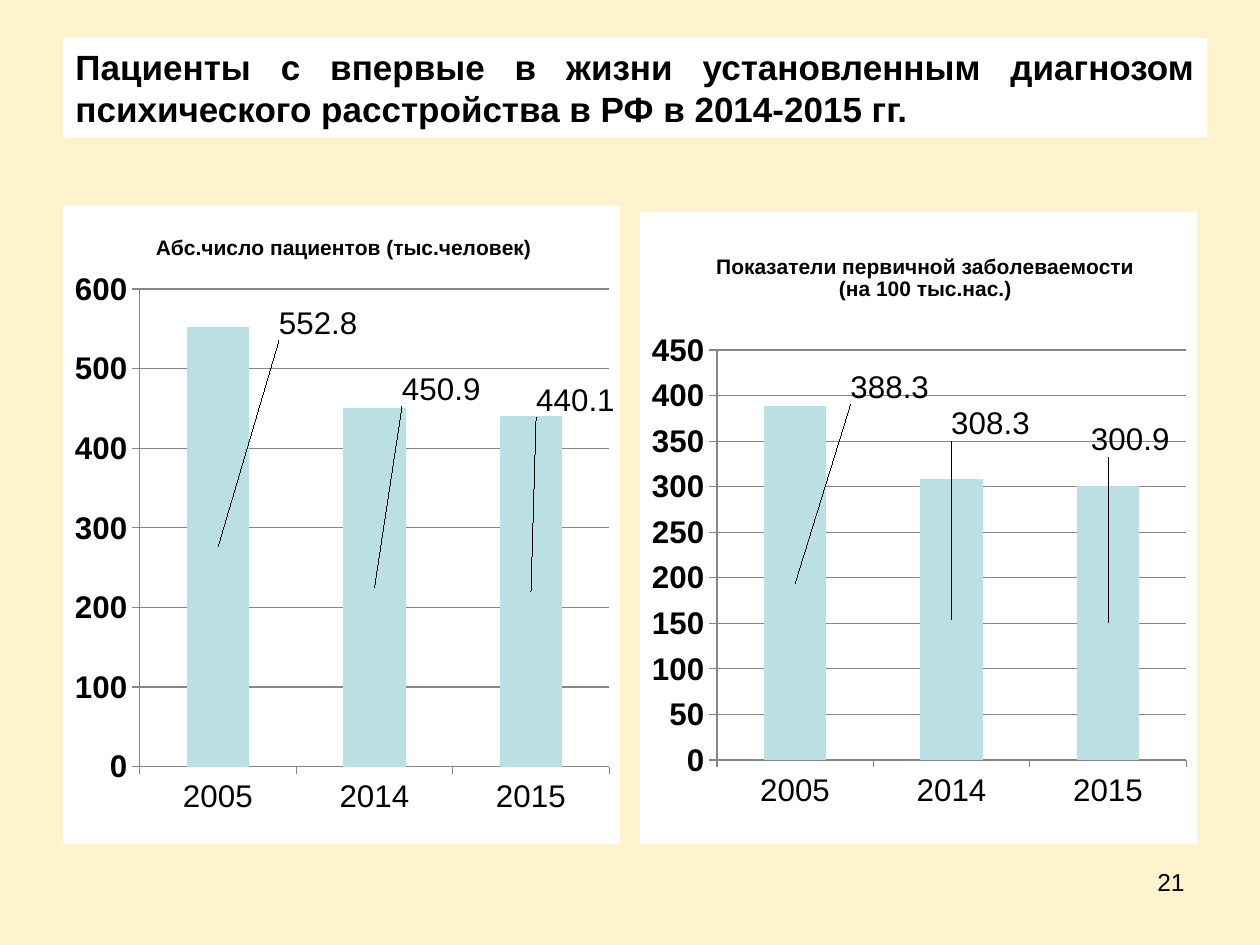
from dataclasses import dataclass

import lxml.etree
import pptx
import pptx.chart.data
import pptx.dml.color
import pptx.enum.chart
import pptx.enum.shapes
import pptx.enum.text
import pptx.oxml
import pptx.oxml.ns
import pptx.util

Pt = pptx.util.Pt
qn = pptx.oxml.ns.qn

COLOURS = {
    "page": "FFF3CD",
    "panel": "FFFFFF",
    "text": "000000",
    "bar": "BBE0E3",
    "grid": "868686",
}
FONT = "Arial"
YEARS = ("2005", "2014", "2015")


@dataclass(frozen=True)
class BarPanel:
    title: str
    values: tuple[float, ...]
    left: float
    top: float
    height: float
    maximum: int
    step: int
    title_place: tuple[float, float]
    plot_area: tuple[float, float, float, float]
    label_shifts: tuple[tuple[float, float], ...]
    width: float = 318.24


PANELS = (
    BarPanel(
        "Абс.число пациентов (тыс.человек)", (552.8, 450.9, 440.1),
        36, 117.36, 365.04, 600, 100,
        (0.16, 0.04), (0.138, 0.131, 0.843, 0.748),
        ((0.18, -0.35), (0.12, -0.31), (0.08, -0.3)),
    ),
    BarPanel(
        "Показатели первичной заболеваемости (на 100 тыс.нас.)", (388.3, 308.3, 300.9),
        365.76, 120.96, 361.44, 450, 50,
        (0.13, 0.06), (0.138, 0.219, 0.843, 0.648),
        ((0.17, -0.31), (0.07, -0.31), (0.04, -0.29)),
    ),
)


def rgb(name: str) -> pptx.dml.color.RGBColor:
    return pptx.dml.color.RGBColor.from_string(COLOURS[name])


def paint(fill, name: str) -> None:
    fill.solid()
    fill.fore_color.rgb = rgb(name)


def style_font(font, size: float, bold: bool = False) -> None:
    font.name = FONT
    font.size = Pt(size)
    font.bold = bold
    font.color.rgb = rgb("text")


def write_text(box, text: str, size: float, align, bold: bool = False) -> None:
    box.text_frame.word_wrap = True
    para = box.text_frame.paragraphs[0]
    para.text = text
    para.alignment = align
    style_font(para.font, size, bold)


def make_layout(place: tuple[float, ...], edge: bool = True, inner: bool = False):
    layout = pptx.oxml.parse_xml(f'<c:layout {pptx.oxml.ns.nsdecls("c")}/>')
    manual = lxml.etree.SubElement(layout, qn("c:manualLayout"))
    settings = []
    if inner:
        settings.append(("layoutTarget", "inner"))
    if edge:
        settings += [("xMode", "edge"), ("yMode", "edge")]
    settings += list(zip("xywh", place))
    for tag, value in settings:
        lxml.etree.SubElement(manual, qn(f"c:{tag}")).set("val", str(value))
    return layout


def place_element(parent, layout, index: int) -> None:
    for previous in parent.findall(qn("c:layout")):
        parent.remove(previous)
    parent.insert(index, layout)


def fill_chart_area(chart) -> None:
    properties = pptx.oxml.parse_xml(
        f'<c:spPr {pptx.oxml.ns.nsdecls("c", "a")}><a:solidFill>'
        f'<a:srgbClr val="{COLOURS["panel"]}"/></a:solidFill>'
        "<a:ln><a:noFill/></a:ln></c:spPr>"
    )
    chart.element.find(qn("c:chart")).addnext(properties)


def style_axes(chart, panel: BarPanel) -> None:
    for axis in (chart.category_axis, chart.value_axis):
        axis.major_tick_mark = pptx.enum.chart.XL_TICK_MARK.OUTSIDE
        axis.minor_tick_mark = pptx.enum.chart.XL_TICK_MARK.NONE
        axis.format.line.color.rgb = rgb("grid")
    axis = chart.value_axis
    axis.minimum_scale = 0
    axis.maximum_scale = panel.maximum
    axis.major_unit = panel.step
    axis.has_major_gridlines = True
    axis.major_gridlines.format.line.color.rgb = rgb("grid")
    axis.tick_labels.number_format = "0"
    axis.tick_labels.number_format_is_linked = False
    style_font(axis.tick_labels.font, 17.9, True)


def style_labels(chart, panel: BarPanel) -> None:
    plot = chart.plots[0]
    plot.has_data_labels = True
    plot.data_labels.show_value = True
    plot.data_labels.number_format = "0.0"
    plot.data_labels.number_format_is_linked = False
    style_font(plot.data_labels.font, 17.9)
    for index, shift in enumerate(panel.label_shifts):
        label = plot.series[0].points[index].data_label
        label.position = pptx.enum.chart.XL_LABEL_POSITION.CENTER
        element = chart.element.xpath(f".//c:dLbl[c:idx/@val='{index}']")[0]
        place_element(element, make_layout(shift, edge=False), 1)


def add_bar_panel(page, panel: BarPanel) -> None:
    data = pptx.chart.data.CategoryChartData(number_format="0.0")
    data.categories = YEARS
    data.add_series(panel.title, panel.values)
    chart = page.shapes.add_chart(
        pptx.enum.chart.XL_CHART_TYPE.COLUMN_STACKED,
        Pt(panel.left), Pt(panel.top), Pt(panel.width), Pt(panel.height), data,
    ).chart
    style_font(chart.font, 17.9)
    chart.has_legend = False
    chart.has_title = True
    para = chart.chart_title.text_frame.paragraphs[0]
    para.text = panel.title
    style_font(para.font, 12, True)
    title = chart.element.find(".//" + qn("c:title"))
    place_element(title, make_layout(panel.title_place), 1)
    plot_area = chart.element.find(".//" + qn("c:plotArea"))
    place_element(plot_area, make_layout(panel.plot_area, inner=True), 0)
    fill_chart_area(chart)
    plot = chart.plots[0]
    plot.gap_width = 150
    plot.overlap = 100
    plot.vary_by_categories = False
    paint(plot.series[0].format.fill, "bar")
    style_axes(chart, panel)
    style_labels(chart, panel)


def main() -> None:
    deck = pptx.Presentation()
    deck.slide_width, deck.slide_height = Pt(720), Pt(540)
    page = deck.slides.add_slide(deck.slide_layouts[6])
    paint(page.background.fill, "page")

    heading = page.shapes.add_shape(
        pptx.enum.shapes.MSO_SHAPE.RECTANGLE, Pt(36), Pt(21.6), Pt(653.76), Pt(56.88)
    )
    heading.shadow.inherit = False
    paint(heading.fill, "panel")
    heading.line.fill.background()
    heading.text_frame.vertical_anchor = pptx.enum.text.MSO_ANCHOR.MIDDLE
    write_text(
        heading,
        "Пациенты с впервые в жизни установленным диагнозом "
        "психического расстройства в РФ в 2014-2015 гг.",
        20, pptx.enum.text.PP_ALIGN.JUSTIFY, True,
    )

    number = page.shapes.add_textbox(Pt(516.24), Pt(491.76), Pt(167.76), Pt(37.44))
    write_text(number, "21", 14, pptx.enum.text.PP_ALIGN.RIGHT)

    for panel in PANELS:
        add_bar_panel(page, panel)
    deck.save("out.pptx")


if __name__ == "__main__":
    main()
